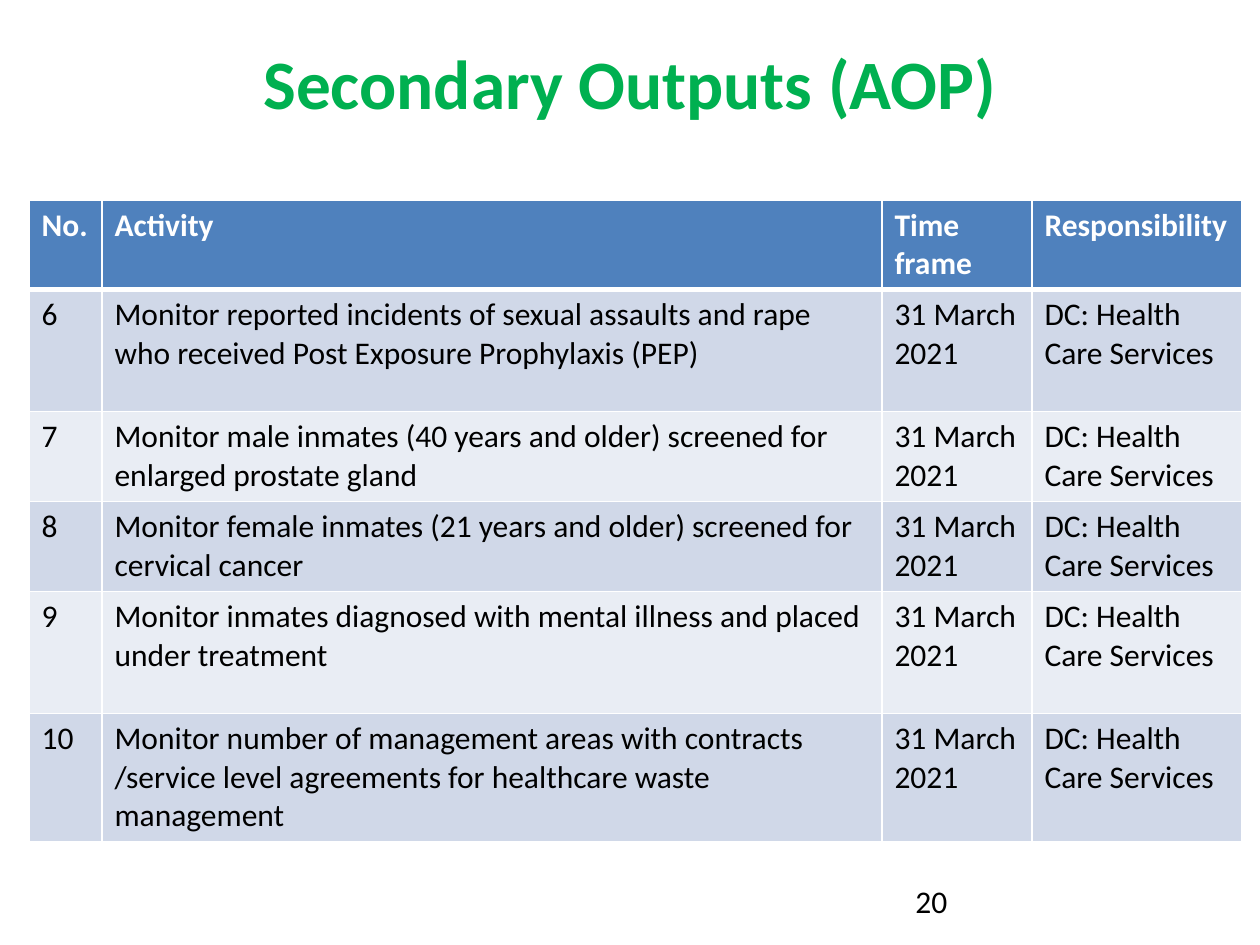
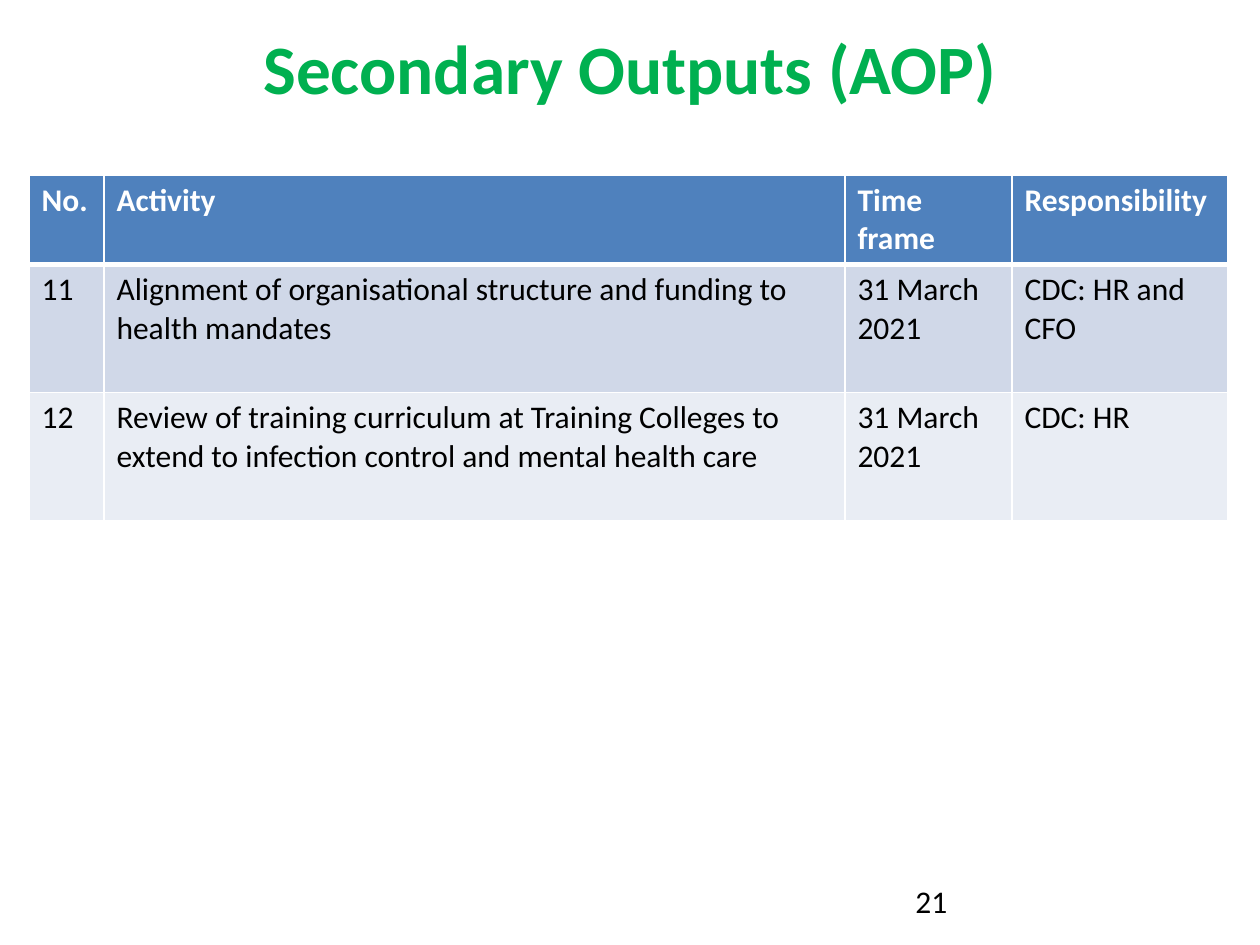
"""Build two activity-plan slides, each a title, a table and a page number."""
from dataclasses import dataclass

from lxml import etree
from pptx import Presentation
from pptx import util as u
from pptx.dml import color
from pptx.enum import text
from pptx.oxml import ns


@dataclass(frozen=True)
class Theme:
    """Colours as hex, type sizes and line widths in points."""
    font: str = "Calibri"
    title: str = "00B050"
    head: str = "4F81BD"
    bands: tuple = ("D0D8E8", "E9EDF4")
    light: str = "FFFFFF"
    ink: str = "000000"
    big: float = 39.6
    body: float = 18
    thin: float = 1
    thick: float = 3


T = Theme()
HEADS = ["No.", "Activity", "Time\nframe", "Responsibility"]
DUE = "31 March 2021"
CARE = "DC: Health Care Services"

PAGES = [
    dict(
        page=20, top=29, box=(29, 200),
        cols=[73, 780, 150, 210], rows=[88, 122, 90, 90, 122, 128],
        items=[
            ("6", "Monitor reported incidents of sexual assaults and rape who "
             "received Post Exposure Prophylaxis (PEP)", DUE, CARE),
            ("7", "Monitor male inmates (40 years and older) screened for "
             "enlarged prostate gland", DUE, CARE),
            ("8", "Monitor female inmates (21 years and older) screened for "
             "cervical cancer", DUE, CARE),
            ("9", "Monitor inmates diagnosed with mental illness and placed "
             "under treatment", DUE, CARE),
            ("10", "Monitor number of management areas with contracts /service "
             "level agreements for healthcare waste management", DUE, CARE),
        ],
    ),
    dict(
        page=21, top=14, box=(29, 175),
        cols=[75, 741, 167, 216], rows=[88, 128, 128],
        items=[
            ("11", "Alignment of organisational structure and funding to "
             "health mandates", DUE, "CDC: HR and CFO"),
            ("12", "Review of training curriculum at Training Colleges to "
             "extend to infection control and mental health care", DUE,
             "CDC: HR"),
        ],
    ),
]


def px(n):
    """Turn pixels at 126 to the inch into EMU."""
    return u.Emu(round(n * 914400 / 126))


def rgb(code):
    """Turn a hex code into a colour."""
    return color.RGBColor.from_string(code)


def style(frame, size, ink, bold=False, align=None):
    """Format every paragraph of a text frame alike."""
    for para in frame.paragraphs:
        para.alignment = align
        font = para.font
        font.name, font.size, font.bold = T.font, u.Pt(size), bold
        font.color.rgb = rgb(ink)


def border(cell, top, bottom):
    """Draw light lines on the four sides of a cell."""
    props = cell._tc.get_or_add_tcPr()
    for side, width in zip("LRTB", (T.thin, T.thin, top, bottom)):
        line = etree.SubElement(props, ns.qn("a:ln" + side), w=str(u.Pt(width)))
        fill = etree.SubElement(line, ns.qn("a:solidFill"))
        etree.SubElement(fill, ns.qn("a:srgbClr"), val=T.light)


def title(slide, top):
    """Place and format the title."""
    head = slide.shapes.title
    head.left, head.top, head.width, head.height = map(px, (63, top, 1134, 106))
    frame = head.text_frame
    frame.text = "Secondary Outputs (AOP)"
    frame.auto_size = text.MSO_AUTO_SIZE.NONE
    frame.vertical_anchor = text.MSO_ANCHOR.MIDDLE
    style(frame, T.big, T.title, True, text.PP_ALIGN.CENTER)


def grid(slide, box, cols, rows, items):
    """Draw the activity table from its top left corner."""
    size = map(px, (*box, sum(cols), sum(rows)))
    table = slide.shapes.add_table(len(rows), len(cols), *size).table
    for col, width in zip(table.columns, cols):
        col.width = px(width)
    for i, (row, height, words) in enumerate(zip(table.rows, rows, [HEADS, *items])):
        row.height = px(height)
        first = i == 0
        for cell, word in zip(row.cells, words):
            cell.text = word
            style(cell.text_frame, T.body, T.light if first else T.ink, first)
            border(cell, T.thick if i == 1 else T.thin,
                   T.thick if first else T.thin)
            cell.fill.solid()
            cell.fill.fore_color.rgb = rgb(T.head if first else T.bands[(i - 1) % 2])


def footer(slide, page):
    """Write the page number."""
    frame = slide.shapes.add_textbox(*map(px, (903, 876, 294, 50))).text_frame
    frame.word_wrap = True
    frame.text = str(page)
    style(frame, T.body, T.ink)


def build(deck, page, top, box, cols, rows, items):
    """Add one slide with its title, table and page number."""
    slide = deck.slides.add_slide(deck.slide_layouts[5])
    title(slide, top)
    grid(slide, box, cols, rows, items)
    footer(slide, page)


def main():
    """Build and save the deck."""
    deck = Presentation()
    deck.slide_width, deck.slide_height = px(1260), px(945)
    for plan in PAGES:
        build(deck, **plan)
    deck.save("out.pptx")


if __name__ == "__main__":
    main()
